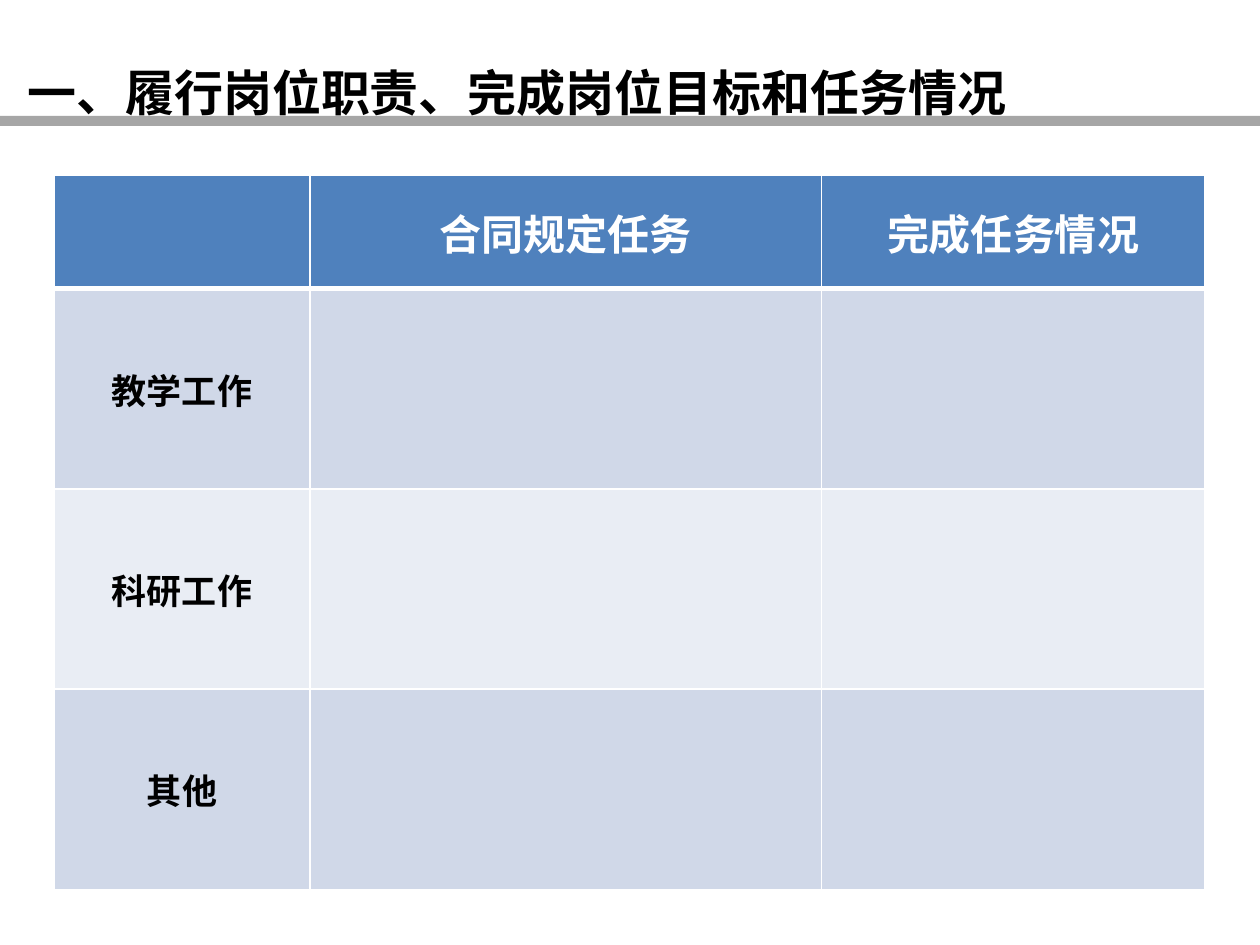
from dataclasses import dataclass

import lxml.etree
import pptx
import pptx.dml.color
import pptx.enum.shapes
import pptx.enum.text
import pptx.oxml.ns
import pptx.util

Inches = pptx.util.Inches
Pt = pptx.util.Pt
RGBColor = pptx.dml.color.RGBColor
Align = pptx.enum.text.PP_ALIGN
Anchor = pptx.enum.text.MSO_ANCHOR
qn = pptx.oxml.ns.qn

BLACK = RGBColor(0x00, 0x00, 0x00)
WHITE = RGBColor(0xFF, 0xFF, 0xFF)
GRAY = RGBColor(0xA6, 0xA6, 0xA6)
HEADER_BLUE = RGBColor(0x4F, 0x81, 0xBD)
BAND_DARK = RGBColor(0xD0, 0xD8, 0xE8)
BAND_LIGHT = RGBColor(0xE9, 0xED, 0xF4)
CHINESE_FONT = "Noto Sans CJK SC"

COLUMN_WIDTHS = (2.03, 4.06, 3.04)
HEADER_HEIGHT = 0.9
TASK_HEIGHT = 1.59


@dataclass(frozen=True)
class TableRow:
    texts: tuple[str, ...]
    height: float
    fill: RGBColor
    font: dict
    top_line: float = 1
    bottom_line: float = 1


HEADER_FONT = {"name": "Calibri", "size": Pt(24), "bold": True}
LABEL_FONT = {"name": CHINESE_FONT, "size": Pt(20), "bold": True}
TITLE_FONT = {"name": CHINESE_FONT, "size": Pt(28), "bold": True}

ROWS = (
    TableRow(("", "合同规定任务", "完成任务情况"), HEADER_HEIGHT, HEADER_BLUE,
             HEADER_FONT, bottom_line=3),
    TableRow(("教学工作", "", ""), TASK_HEIGHT, BAND_DARK, LABEL_FONT, top_line=3),
    TableRow(("科研工作", "", ""), TASK_HEIGHT, BAND_LIGHT, LABEL_FONT),
    TableRow(("其他", "", ""), TASK_HEIGHT, BAND_DARK, LABEL_FONT),
)


def add_text(para, text: str, font: dict, color: RGBColor) -> None:
    span = para.add_run()
    span.text = text
    for name, value in font.items():
        setattr(span.font, name, value)
    span.font.color.rgb = color
    east_asian = lxml.etree.SubElement(span.font._element, qn("a:ea"))
    east_asian.set("typeface", CHINESE_FONT)


def add_borders(cell, widths: dict[str, float]) -> None:
    properties = cell._tc.get_or_add_tcPr()
    for side, width in widths.items():
        line = lxml.etree.SubElement(properties, qn(f"a:ln{side}"), w=str(Pt(width)))
        fill = lxml.etree.SubElement(line, qn("a:solidFill"))
        lxml.etree.SubElement(fill, qn("a:srgbClr"), val=str(WHITE))


def add_title(page) -> None:
    rule = page.shapes.add_shape(
        pptx.enum.shapes.MSO_SHAPE.RECTANGLE,
        Inches(0), Inches(0.92), Inches(10), Inches(0.08))
    rule.shadow.inherit = False
    rule.fill.solid()
    rule.fill.fore_color.rgb = GRAY
    rule.line.fill.background()

    box = page.shapes.add_textbox(Inches(0.12), Inches(0.21), Inches(8.27), Inches(0.7))
    box.text_frame.word_wrap = True
    box.text_frame.auto_size = pptx.enum.text.MSO_AUTO_SIZE.SHAPE_TO_FIT_TEXT
    para = box.text_frame.paragraphs[0]
    layout = {"alignment": Align.JUSTIFY, "line_spacing": 1.5, "space_before": Pt(6)}
    for name, value in layout.items():
        setattr(para, name, value)
    add_text(para, "一、履行岗位职责、完成岗位目标和任务情况", TITLE_FONT, BLACK)


def fill_cell(cell, text: str, row: TableRow) -> None:
    add_borders(cell, {"L": 1, "R": 1, "T": row.top_line, "B": row.bottom_line})
    cell.fill.solid()
    cell.fill.fore_color.rgb = row.fill
    cell.vertical_anchor = Anchor.MIDDLE
    if text:
        para = cell.text_frame.paragraphs[0]
        para.alignment = Align.CENTER
        add_text(para, text, row.font, WHITE if row.fill == HEADER_BLUE else BLACK)


def add_task_table(page) -> None:
    table = page.shapes.add_table(
        len(ROWS), len(COLUMN_WIDTHS), Inches(0.43), Inches(1.39),
        Inches(sum(COLUMN_WIDTHS)), Inches(sum(row.height for row in ROWS))).table
    for column, width in zip(table.columns, COLUMN_WIDTHS):
        column.width = Inches(width)
    for table_row, row in zip(table.rows, ROWS):
        table_row.height = Inches(row.height)
        for cell, text in zip(table_row.cells, row.texts):
            fill_cell(cell, text, row)


def main() -> None:
    deck = pptx.Presentation()
    deck.slide_width = Inches(10)
    deck.slide_height = Inches(7.5)
    page = deck.slides.add_slide(deck.slide_layouts[6])
    add_title(page)
    add_task_table(page)
    deck.save("out.pptx")


if __name__ == "__main__":
    main()
